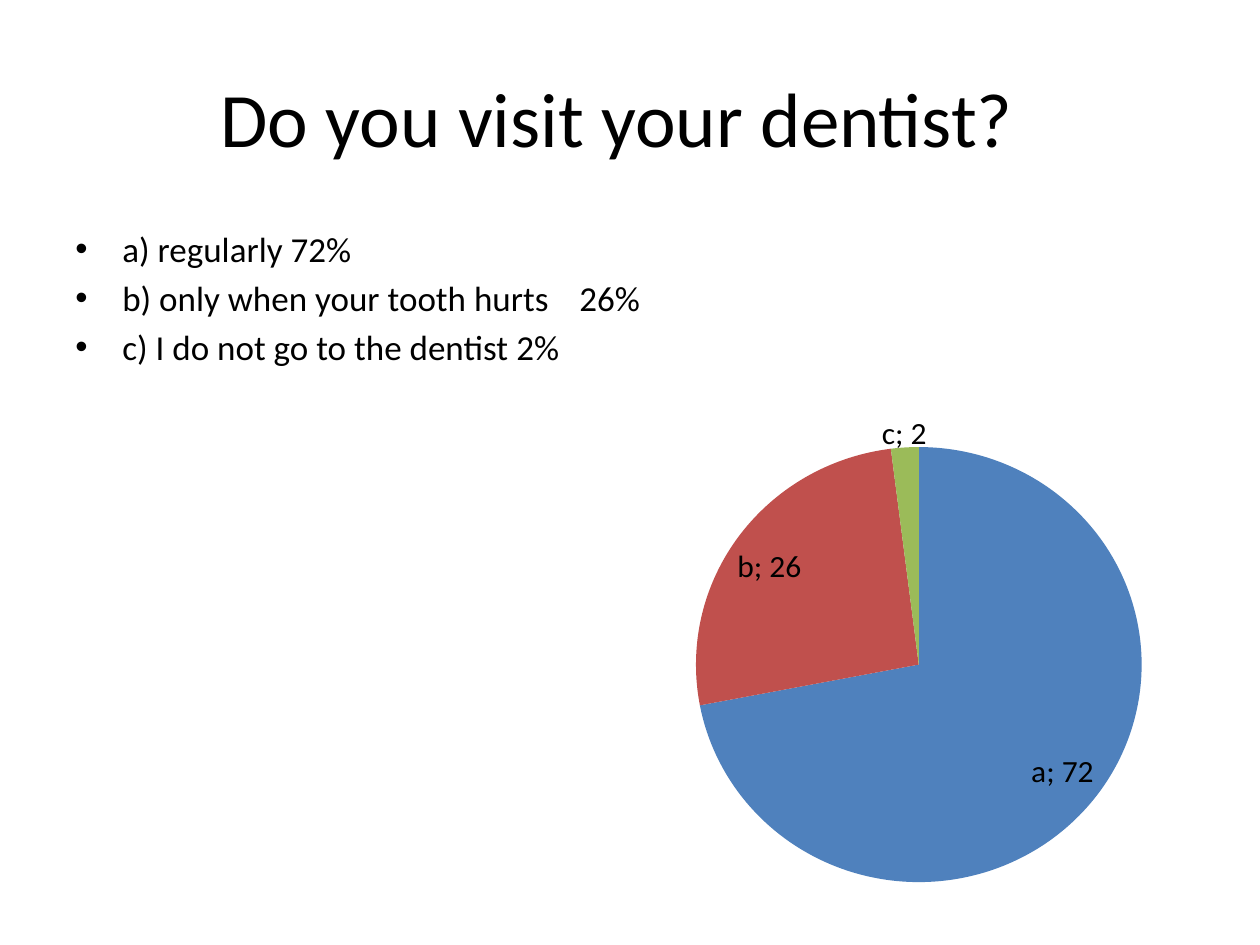
from pptx import Presentation
from pptx.chart.data import CategoryChartData as ChartData
from pptx.dml.color import RGBColor as RGB
from pptx.enum.chart import XL_CHART_TYPE as ChartType, XL_LABEL_POSITION as LabelPos
from pptx.enum.text import MSO_ANCHOR as Anchor, PP_ALIGN as Align
from pptx.oxml import parse_xml
from pptx.oxml.ns import nsdecls, qn
from pptx.util import Pt

PX = 914400 // 126
THEME = {
    "font": "Calibri",
    "text": RGB.from_string("000000"),
    "slices": ["4F81BD", "C0504D", "9BBB59"],
    "title": Pt(44),
    "body": Pt(20),
    "label": Pt(18),
}


def box(*lengths):
    return [length * PX for length in lengths]


def style(font, size):
    for key, value in {"name": THEME["font"], "size": THEME[size]}.items():
        setattr(font, key, value)
    font.color.rgb = THEME["text"]


prs = Presentation()
prs.slide_width, prs.slide_height = box(1260, 945)
slide = prs.slides.add_slide(prs.slide_layouts[5])

title = slide.shapes.title
title_place = zip(("left", "top", "width", "height"), box(63, 38, 1134, 157))
for key, value in title_place:
    setattr(title, key, value)
heading = title.text_frame
heading.text = "Do you visit your dentist?\t"
heading.vertical_anchor = Anchor.MIDDLE
heading.paragraphs[0].alignment = Align.CENTER
style(heading.paragraphs[0].runs[0].font, "title")

answers = slide.shapes.add_textbox(*box(63, 221, 1134, 624)).text_frame
answers.word_wrap = True
answers.text = "\n".join([
    "a) regularly 72%",
    "b) only when your tooth hurts\t26%",
    "c) I do not go to the dentist\t2%",
])
for answer in answers.paragraphs:
    style(answer.runs[0].font, "body")
    props = answer._p.get_or_add_pPr()
    for key, value in {"marL": 47 * PX, "indent": -47 * PX}.items():
        props.set(key, str(value))
    for xml in (
        '<a:spcBef {}><a:spcPct val="20000"/></a:spcBef>',
        '<a:buFont {} typeface="Arial"/>',
        '<a:buChar {} char="•"/>',
    ):
        props.append(parse_xml(xml.format(nsdecls("a"))))

survey = ChartData(number_format="0")
survey.categories = ["a", "b", "c"]
survey.add_series("Series 1", [72, 26, 2])
pie = slide.shapes.add_chart(ChartType.PIE, *box(541, 403, 684, 484), survey).chart
pie.has_title = False
pie.has_legend = False
style(pie.font, "label")

plot = pie.plots[0]
plot.vary_by_categories = True
for index, color in enumerate(THEME["slices"]):
    fill = plot.series[0].points[index].format.fill
    fill.solid()
    fill.fore_color.rgb = RGB.from_string(color)

plot.has_data_labels = True
labels = plot.data_labels
label_format = {
    "show_value": True,
    "show_category_name": True,
    "show_percentage": False,
    "number_format": "0",
    "number_format_is_linked": False,
    "position": LabelPos.BEST_FIT,
}
for key, value in label_format.items():
    setattr(labels, key, value)
style(labels.font, "label")

plot_area = pie._chartSpace.chart.plotArea
for layout in plot_area.findall(qn("c:layout")):
    plot_area.remove(layout)
plot_area.insert(0, parse_xml(
    f'<c:layout {nsdecls("c")}><c:manualLayout><c:layoutTarget val="inner"/>'
    '<c:xMode val="edge"/><c:yMode val="edge"/><c:x val="0.225"/><c:y val="0.069"/>'
    '<c:w val="0.655"/><c:h val="0.921"/></c:manualLayout></c:layout>'
))

prs.save("out.pptx")
